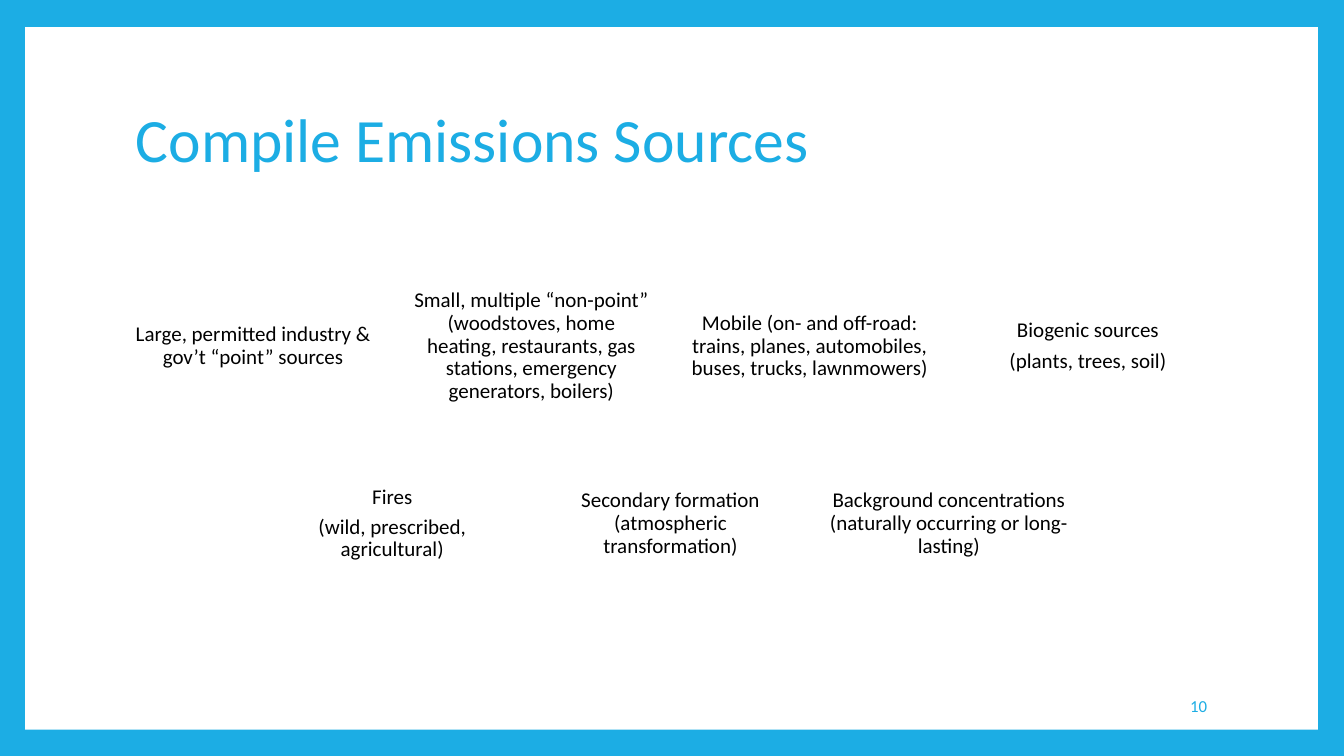
from dataclasses import dataclass

from pptx import Presentation
from pptx.dml.color import RGBColor
from pptx.enum.shapes import MSO_SHAPE as Shape
from pptx.enum.text import MSO_ANCHOR as Anchor, PP_ALIGN as Align
from pptx.util import Inches, Pt


@dataclass(frozen=True)
class Theme:
    font: str = "Calibri"
    accent: RGBColor = RGBColor(0x1C, 0xAD, 0xE4)
    paper: RGBColor = RGBColor(0xFF, 0xFF, 0xFF)
    ink: RGBColor = RGBColor(0, 0, 0)
    title_size: float = 44
    card_size: float = 15
    number_size: float = 12
    line_spacing: float = 0.9
    card_gap: float = 5.25


THEME = Theme()
WIDTH, HEIGHT = 13.33, 7.5
MARGIN, CONTENT_WIDTH = 1.25, 10.8
CARD_WIDTH, CARD_HEIGHT = 2.51, 1.51
CARD_INSET = 0.06
GUTTER = 0.25
GRID_TOP = 2.68

SOURCE_ROWS = [
    [
        ["Large, permitted industry & gov’t “point” sources"],
        ["Small, multiple “non-point” (woodstoves, home heating, restaurants, "
         "gas stations, emergency generators, boilers)"],
        ["Mobile (on- and off-road: trains, planes, automobiles, buses, trucks, lawnmowers)"],
        ["Biogenic sources", "(plants, trees, soil)"],
    ],
    [
        ["Fires", "(wild, prescribed, agricultural)"],
        ["Secondary formation (atmospheric transformation)"],
        ["Background concentrations (naturally occurring or long-lasting)"],
    ],
]


def write(shape, lines, size, color, align=Align.LEFT, gap=0):
    frame = shape.text_frame
    frame.word_wrap = True
    frame.vertical_anchor = Anchor.MIDDLE
    for index, line in enumerate(lines):
        para = frame.add_paragraph() if index else frame.paragraphs[0]
        para.alignment = align
        para.line_spacing = THEME.line_spacing
        para.space_after = Pt(gap)
        span = para.add_run()
        span.text = line
        span.font.name = THEME.font
        span.font.size = Pt(size)
        span.font.color.rgb = color


def add_panel(page, *bounds):
    panel = page.shapes.add_shape(Shape.RECTANGLE, *map(Inches, bounds))
    panel.shadow.inherit = False
    panel.fill.solid()
    panel.fill.fore_color.rgb = THEME.paper
    panel.line.fill.background()
    return panel


def add_label(page, bounds, text, size, align=Align.LEFT):
    box = page.shapes.add_textbox(*map(Inches, bounds))
    write(box, [text], size, THEME.accent, align)


def add_card(page, left, top, lines):
    card = add_panel(page, left, top, CARD_WIDTH, CARD_HEIGHT)
    frame = card.text_frame
    frame.margin_left = frame.margin_right = Inches(CARD_INSET)
    frame.margin_top = frame.margin_bottom = Inches(CARD_INSET)
    write(card, lines, THEME.card_size, THEME.ink, Align.CENTER, THEME.card_gap)


def add_card_row(page, row, cards):
    step = CARD_WIDTH + GUTTER
    row_width = len(cards) * step - GUTTER
    left = MARGIN + (CONTENT_WIDTH - row_width) / 2
    top = GRID_TOP + row * (CARD_HEIGHT + GUTTER)
    for column, lines in enumerate(cards):
        add_card(page, left + column * step, top, lines)


def main():
    deck = Presentation()
    deck.slide_width, deck.slide_height = Inches(WIDTH), Inches(HEIGHT)
    page = deck.slides.add_slide(deck.slide_layouts[6])
    page.background.fill.solid()
    page.background.fill.fore_color.rgb = THEME.accent
    add_panel(page, 0.25, 0.27, 12.82, 6.97)
    add_label(page, (MARGIN, 0.67, CONTENT_WIDTH, 1.48),
              "Compile Emissions Sources", THEME.title_size)
    for row, cards in enumerate(SOURCE_ROWS):
        add_card_row(page, row, cards)
    add_label(page, (10.2, 6.81, 1.87, 0.4), "10", THEME.number_size, Align.RIGHT)
    deck.save("out.pptx")


if __name__ == "__main__":
    main()
